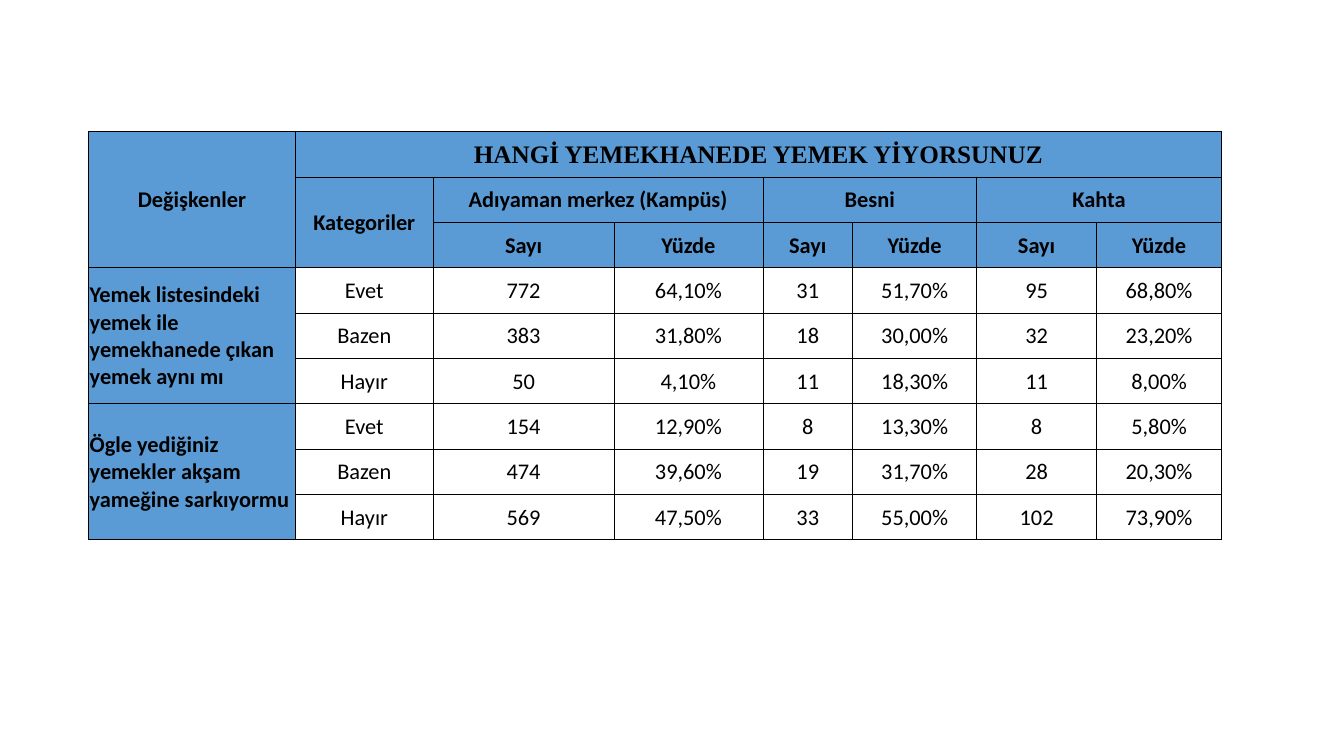
from dataclasses import dataclass

from lxml.etree import SubElement
from pptx import Presentation
from pptx.dml.color import RGBColor
from pptx.enum.text import MSO_ANCHOR, PP_ALIGN
from pptx.oxml.ns import qn
from pptx.table import Table, _Cell
from pptx.util import Inches, Pt

COLORS = {"header": "5B9BD5", "ink": "000000"}
SLIDE_W, SLIDE_H = Inches(13.333), Inches(7.5)
LEFT, TOP = 0.066, 0.174  # shares of the slide
COLUMNS = [0.1538, 0.1028, 0.1343, 0.111, 0.0668, 0.0923, 0.0893, 0.093]  # shares of the width
ROW_SHARE = 0.06  # share of the slide's height
ROWS = 9

MARGINS = {"margin_left": Inches(0.01), "margin_right": Inches(0.01),
           "margin_top": Inches(0.01), "margin_bottom": 0}
BODY = {"name": "Calibri", "size": Pt(16), "bold": False}
HEAD = BODY | {"bold": True}
TITLE = HEAD | {"name": "Times New Roman", "size": Pt(18)}


@dataclass(frozen=True)
class Entry:
    """Text of a table cell, with its grid place and span."""
    row: int
    col: int
    text: str
    rows: int = 1
    cols: int = 1
    fill: str | None = None
    centred: bool = True


CANTEENS = ["Adıyaman merkez (Kampüs)", "Besni", "Kahta"]
QUESTIONS = {
    "Yemek listesindeki yemek ile yemekhanede çıkan yemek aynı mı": [
        ["Evet", "772", "64,10%", "31", "51,70%", "95", "68,80%"],
        ["Bazen", "383", "31,80%", "18", "30,00%", "32", "23,20%"],
        ["Hayır", "50", "4,10%", "11", "18,30%", "11", "8,00%"],
    ],
    "Ögle yediğiniz yemekler akşam yameğine sarkıyormu": [
        ["Evet", "154", "12,90%", "8", "13,30%", "8", "5,80%"],
        ["Bazen", "474", "39,60%", "19", "31,70%", "28", "20,30%"],
        ["Hayır", "569", "47,50%", "33", "55,00%", "102", "73,90%"],
    ],
}


def header_entries() -> list[Entry]:
    entries = [Entry(0, 0, "Değişkenler", rows=3, fill="header"),
               Entry(1, 1, "Kategoriler", rows=2, fill="header")]
    for i, canteen in enumerate(CANTEENS):
        col = 2 + 2 * i
        entries.append(Entry(1, col, canteen, cols=2, fill="header"))
        entries += [Entry(2, col + j, label, fill="header")
                    for j, label in enumerate(["Sayı", "Yüzde"])]
    return entries


def answer_entries() -> list[Entry]:
    entries = []
    for i, (question, answers) in enumerate(QUESTIONS.items()):
        top = 3 + 3 * i
        entries.append(Entry(top, 0, question, rows=3, fill="header", centred=False))
        entries += [Entry(top + r, 1 + c, text)
                    for r, answer in enumerate(answers) for c, text in enumerate(answer)]
    return entries


def add_borders(cell: _Cell) -> None:
    tcPr = cell._tc.get_or_add_tcPr()
    for side in ("lnL", "lnR", "lnT", "lnB"):
        ln = SubElement(tcPr, qn(f"a:{side}"), w=str(Pt(0.5)))
        SubElement(SubElement(ln, qn("a:solidFill")), qn("a:srgbClr"), val=COLORS["ink"])


def write_entry(table: Table, entry: Entry, font: dict) -> None:
    cell = table.cell(entry.row, entry.col)
    if entry.rows * entry.cols > 1:
        cell.merge(table.cell(entry.row + entry.rows - 1, entry.col + entry.cols - 1))
    if entry.fill:
        cell.fill.solid()
        cell.fill.fore_color.rgb = RGBColor.from_string(COLORS[entry.fill])
    p = cell.text_frame.paragraphs[0]
    p.alignment = PP_ALIGN.CENTER if entry.centred else PP_ALIGN.LEFT
    r = p.add_run()
    r.text = entry.text
    for name, value in font.items():
        setattr(r.font, name, value)
    r.font.color.rgb = RGBColor.from_string(COLORS["ink"])


def add_survey_table(slide) -> Table:
    """Add the empty bordered grid."""
    width = int(SLIDE_W * 0.843)
    height = int(SLIDE_H * ROW_SHARE)
    table = slide.shapes.add_table(ROWS, len(COLUMNS), int(SLIDE_W * LEFT), int(SLIDE_H * TOP),
                                   width, height * ROWS).table
    table.first_row = table.horz_banding = False
    for column, share in zip(table.columns, COLUMNS):
        column.width = int(width * share / sum(COLUMNS))
    for row in table.rows:
        row.height = height
    for cell in table.iter_cells():
        add_borders(cell)
        cell.fill.background()
        cell.vertical_anchor = MSO_ANCHOR.MIDDLE
        for name, value in MARGINS.items():
            setattr(cell, name, value)
    return table


def main() -> None:
    prs = Presentation()
    prs.slide_width, prs.slide_height = SLIDE_W, SLIDE_H
    slide = prs.slides.add_slide(prs.slide_layouts[6])
    table = add_survey_table(slide)
    title = Entry(0, 1, "HANGİ YEMEKHANEDE YEMEK YİYORSUNUZ", cols=7, fill="header")
    write_entry(table, title, TITLE)
    for entry in header_entries() + answer_entries():
        write_entry(table, entry, HEAD if entry.fill else BODY)
    prs.save("out.pptx")


if __name__ == "__main__":
    main()
